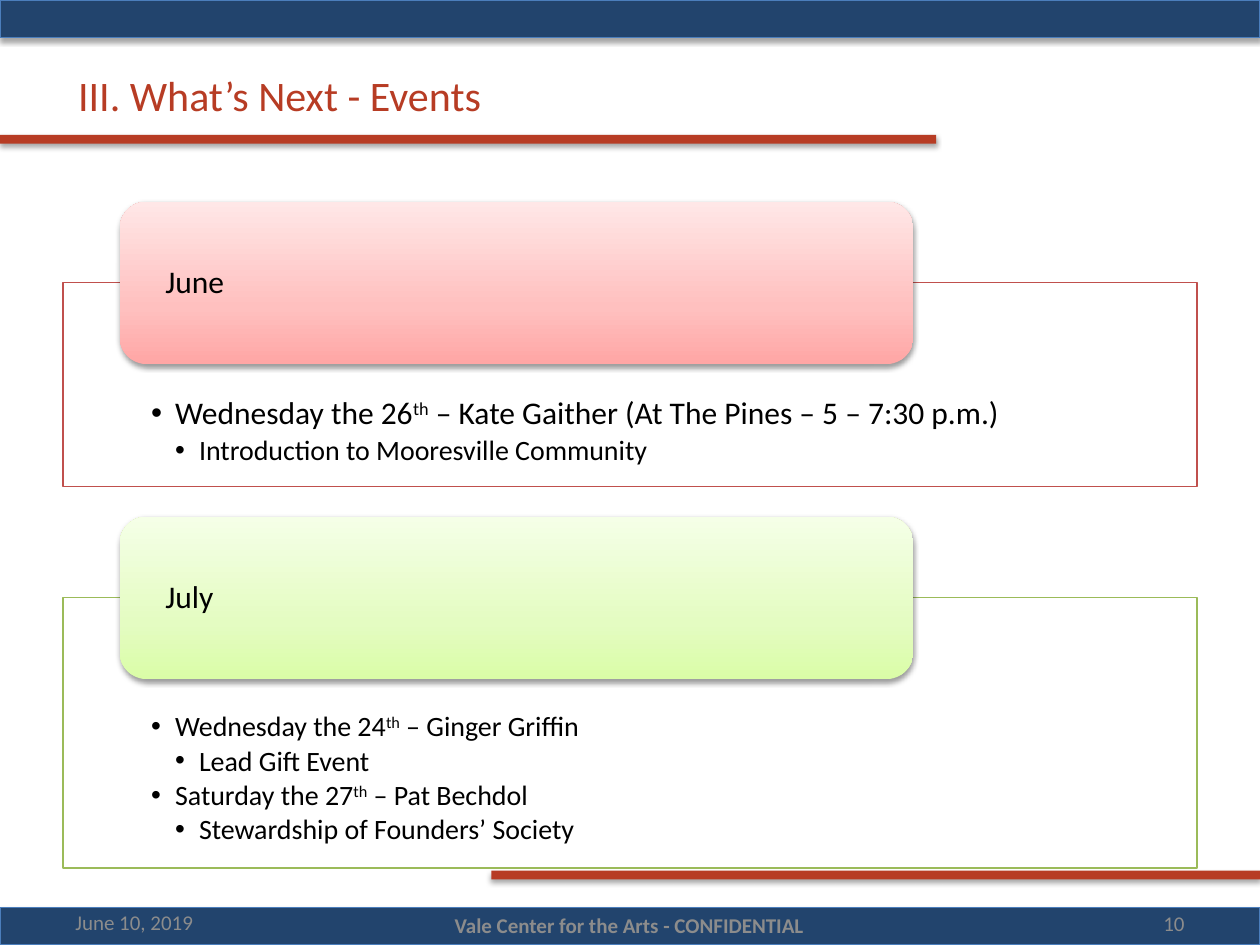
from lxml import etree
from pptx import Presentation
from pptx import util as u
from pptx.dml.color import RGBColor
from pptx.enum import shapes, text
from pptx.oxml import parse_xml
from pptx.oxml.ns import qn

W, H = 10, 7.5
NAVY, EDGE, RUST, GREY = "22446D", "4B7EBC", "B73C24", "8C8C8C"
NS = 'xmlns:a="http://schemas.openxmlformats.org/drawingml/2006/main"'
BAR_H, RULE_H = 0.3, 0.07
TAB_H, INDENT = 1.29, 0.19
ANCHOR, ALIGN = text.MSO_ANCHOR, text.PP_ALIGN

MONTHS = [
    dict(name="June", box=(0.5, 1.6, 9, 2.26), line="C0504D",
         stops=("FFA6A5", "FFC0BF", "FFE7E7"),
         events=[(0, 18, ("Wednesday the 26", "th",
                          " – Kate Gaither (At The Pines – 5 – 7:30 p.m.)")),
                 (1, 16, ("Introduction to Mooresville Community",))]),
    dict(name="July", box=(0.5, 4.1, 9, 2.79), line="9BBB59",
         stops=("DAFDA7", "E4FCC2", "F5FFE7"),
         events=[(0, 16, ("Wednesday the 24", "th", " – Ginger Griffin")),
                 (1, 16, ("Lead Gift Event",)),
                 (0, 16, ("Saturday the 27", "th", " – Pat Bechdol")),
                 (1, 16, ("Stewardship of Founders’ Society",))]),
]


def rgb(c):
    return RGBColor.from_string(c)


def inches(box):
    return [u.Inches(v) for v in box]


def apply(obj, **fmt):
    for name, value in fmt.items():
        setattr(obj, name, value)


def frame(tf, anchor, ins):
    sides = ("margin_left", "margin_top", "margin_right", "margin_bottom")
    apply(tf, word_wrap=True, vertical_anchor=anchor,
          **dict(zip(sides, inches(ins))))


def add_run(p, words, size, color, bold=False):
    r = p.add_run()
    r.text = words
    apply(r.font, name="Calibri", size=u.Pt(size), bold=bold)
    r.font.color.rgb = rgb(color)
    return r


def add_shadow(sp, alpha, dist):
    sp._element.spPr.append(parse_xml(
        f'<a:effectLst {NS}><a:outerShdw blurRad="{u.Pt(3.1)}" dist="{u.Pt(dist)}" '
        f'dir="5400000" rotWithShape="0"><a:srgbClr val="000000">'
        f'<a:alpha val="{alpha * 1000}"/></a:srgbClr></a:outerShdw></a:effectLst>'))


def add_box(s, box, fill=None, line=None, kind=shapes.MSO_SHAPE.RECTANGLE):
    sp = s.shapes.add_shape(kind, *inches(box))
    if fill:
        sp.fill.solid()
        sp.fill.fore_color.rgb = rgb(fill)
    if line:
        sp.line.color.rgb = rgb(line)
        sp.line.width = u.Pt(0.75)
    else:
        sp.line.fill.background()
    return sp


def add_band(s, box, line=None, fill=RUST):
    add_shadow(add_box(s, box, fill, line), 35, 1.8)


def add_gradient(sp, colors):
    sp.fill.gradient()
    sp.fill.gradient_angle = 90
    stops = sp._element.spPr.find(qn("a:gradFill")).find(qn("a:gsLst"))
    for old in list(stops):
        stops.remove(old)
    for pos, color in zip((0, 35, 100), colors):
        gs = etree.SubElement(stops, qn("a:gs"), pos=str(pos * 1000))
        etree.SubElement(gs, qn("a:srgbClr"), val=color)


def add_title(s, box, words):
    sp = s.shapes.title
    apply(sp, **dict(zip(("left", "top", "width", "height"), inches(box))))
    frame(sp.text_frame, ANCHOR.MIDDLE, (0.1, 0.05, 0.1, 0.05))
    p = sp.text_frame.paragraphs[0]
    p.alignment = ALIGN.LEFT
    add_run(p, words, 24, RUST)


def add_footer(s, box, words, align, bold=False):
    tf = s.shapes.add_textbox(*inches(box)).text_frame
    frame(tf, ANCHOR.MIDDLE, (0.1, 0.05, 0.1, 0.05))
    p = tf.paragraphs[0]
    p.alignment = align
    add_run(p, words, 12, GREY, bold)


def add_event(p, level, size, parts):
    apply(p, level=level, alignment=ALIGN.LEFT, line_spacing=0.9,
          space_after=u.Pt(size * 0.15))
    pPr = p._p.get_or_add_pPr()
    pPr.set("marL", str(u.Inches(INDENT * (level + 1))))
    pPr.set("indent", str(u.Inches(-INDENT)))
    etree.SubElement(pPr, qn("a:buFont"), typeface="Arial")
    etree.SubElement(pPr, qn("a:buChar"), char="•")
    for words in parts:
        r = add_run(p, words, size, "000000")
        if words == "th":
            r._r.get_or_add_rPr().set("baseline", "30000")


def add_month(s, box, name, line, stops, events):
    x, y, w, h = box
    body = add_box(s, (x, y + TAB_H / 2, w, h - TAB_H / 2), "FFFFFF", line)
    body.shadow.inherit = False
    tf = body.text_frame
    frame(tf, ANCHOR.TOP, (0.7, 0.91, 0.7, 0.12))
    for i, event in enumerate(events):
        add_event(tf.add_paragraph() if i else tf.paragraphs[0], *event)

    tab = add_box(s, (x + w * 0.05, y, w * 0.7, TAB_H),
                  kind=shapes.MSO_SHAPE.ROUNDED_RECTANGLE)
    add_gradient(tab, stops)
    add_shadow(tab, 38, 1.6)
    frame(tab.text_frame, ANCHOR.MIDDLE, (0.3, 0, 0.3, 0))
    p = tab.text_frame.paragraphs[0]
    apply(p, alignment=ALIGN.LEFT, line_spacing=0.9)
    add_run(p, name, 18, "000000")


def main():
    prs = Presentation()
    apply(prs, slide_width=u.Inches(W), slide_height=u.Inches(H))
    s = prs.slides.add_slide(prs.slide_layouts[5])
    for top in (0, H - BAR_H):
        add_band(s, (0, top, W, BAR_H), EDGE, NAVY)
    add_band(s, (0, 1.07, 7.43, RULE_H))
    add_band(s, (3.9, 6.91, W - 3.9, RULE_H))
    add_title(s, (0.52, 0.45, 9.48, 0.61), "III. What’s Next - Events")
    add_footer(s, (0.5, 7.12, 2.33, 0.4), "June 10, 2019", ALIGN.LEFT)
    add_footer(s, (3.12, 7.15, 3.75, 0.38),
               "Vale Center for the Arts - CONFIDENTIAL", ALIGN.CENTER, True)
    add_footer(s, (7.17, 7.13, 2.33, 0.4), "10", ALIGN.RIGHT)
    for month in MONTHS:
        add_month(s, **month)
    prs.save("out.pptx")


if __name__ == "__main__":
    main()
